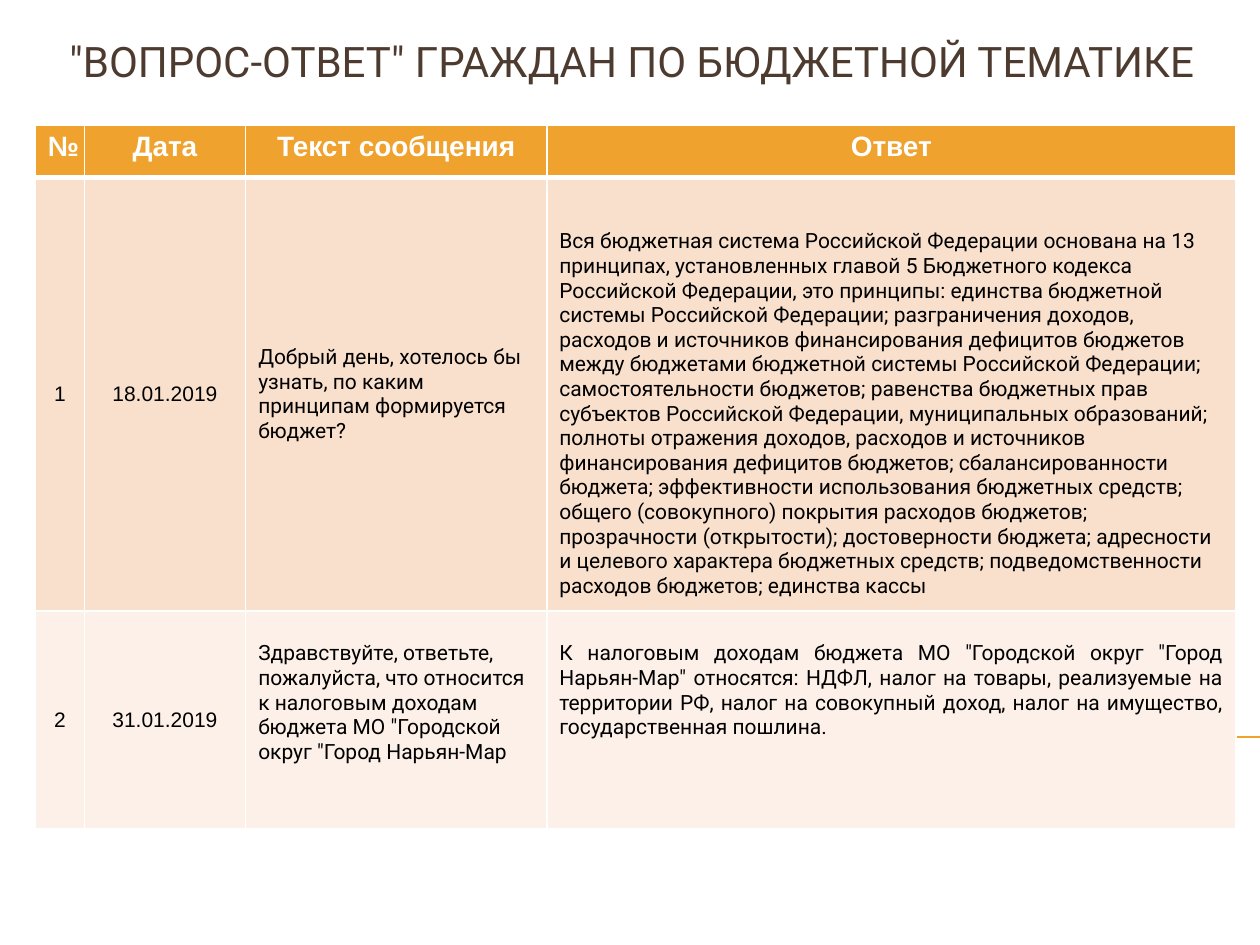
import lxml.etree
import pptx
import pptx.dml.color
import pptx.enum.shapes
import pptx.enum.text
import pptx.oxml.ns
import pptx.util
from pptx.util import Inches

ALIGN = pptx.enum.text.PP_ALIGN
ANCHOR = pptx.enum.text.MSO_ANCHOR

ORANGE = "F0A22E"
WHITE = "FFFFFF"
BLACK = "000000"
BROWN = "4E3B30"
ROW_FILLS = ["F9E0CD", "FCF0E8"]

COLUMN_WIDTHS = [0.39, 1.28, 2.39, 5.47]
ROW_HEIGHTS = [0.42, 3.44, 1.73]
HEADERS = ["№", "Дата", "Текст сообщения", "Ответ"]
PRINCIPLES_INTRO = (
    "Вся бюджетная система Российской Федерации основана на 13 принципах, "
    "установленных главой 5 Бюджетного кодекса Российской Федерации, это принципы: "
)
PRINCIPLES = [
    "единства бюджетной системы Российской Федерации",
    "разграничения доходов, расходов и источников финансирования дефицитов бюджетов "
    "между бюджетами бюджетной системы Российской Федерации",
    "самостоятельности бюджетов",
    "равенства бюджетных прав субъектов Российской Федерации, муниципальных образований",
    "полноты отражения доходов, расходов и источников финансирования дефицитов бюджетов",
    "сбалансированности бюджета",
    "эффективности использования бюджетных средств",
    "общего (совокупного) покрытия расходов бюджетов",
    "прозрачности (открытости)",
    "достоверности бюджета",
    "адресности и целевого характера бюджетных средств",
    "подведомственности расходов бюджетов",
    "единства кассы",
]
MESSAGES = [
    [
        "1",
        "18.01.2019",
        "Добрый день, хотелось бы узнать, по каким принципам формируется бюджет?",
        PRINCIPLES_INTRO + "; ".join(PRINCIPLES),
    ],
    [
        "2",
        "31.01.2019",
        "Здравствуйте, ответьте, пожалуйста, что относится к налоговым доходам "
        "бюджета МО \"Городской округ \"Город Нарьян-Мар",
        "К налоговым доходам бюджета МО \"Городской округ \"Город Нарьян-Мар\" "
        "относятся: НДФЛ, налог на товары, реализуемые на территории РФ, налог на "
        "совокупный доход, налог на имущество, государственная пошлина.",
    ],
]
CENTERED = (ALIGN.CENTER, ANCHOR.MIDDLE, 0.05)
CELL_LAYOUTS = [
    [CENTERED, CENTERED, (ALIGN.LEFT, ANCHOR.MIDDLE, 0.05), (ALIGN.LEFT, ANCHOR.TOP, 0.41)],
    [CENTERED, CENTERED, (ALIGN.LEFT, ANCHOR.TOP, 0.24), (ALIGN.JUSTIFY, ANCHOR.TOP, 0.24)],
]


def color(value):
    return pptx.dml.color.RGBColor.from_string(value)


def write_text(frame, text, font, size, text_color, alignment, bold=False):
    paragraph = frame.paragraphs[0]
    paragraph.alignment = alignment
    run = paragraph.add_run()
    run.text = text
    run.font.name = font
    run.font.size = pptx.util.Pt(size)
    run.font.bold = bold
    run.font.color.rgb = color(text_color)


def add_borders(cell, bottom_width):
    properties = cell._tc.get_or_add_tcPr()
    for side, width in (("lnL", 1), ("lnR", 1), ("lnT", 1), ("lnB", bottom_width)):
        line = lxml.etree.SubElement(
            properties, pptx.oxml.ns.qn("a:" + side), w=str(pptx.util.Pt(width))
        )
        fill = lxml.etree.SubElement(line, pptx.oxml.ns.qn("a:solidFill"))
        lxml.etree.SubElement(fill, pptx.oxml.ns.qn("a:srgbClr"), val=WHITE)


def format_cell(cell, fill_color, anchor, top_margin, bottom_width=1):
    add_borders(cell, bottom_width)
    cell.fill.solid()
    cell.fill.fore_color.rgb = color(fill_color)
    cell.vertical_anchor = anchor
    cell.margin_top = Inches(top_margin)


def add_rule(slide, left, top, width):
    rule = slide.shapes.add_connector(
        pptx.enum.shapes.MSO_CONNECTOR.STRAIGHT,
        Inches(left), Inches(top), Inches(left + width), Inches(top),
    )
    rule.line.color.rgb = color(ORANGE)
    rule.line.width = pptx.util.Pt(0.75)
    lxml.etree.SubElement(rule._element.spPr, pptx.oxml.ns.qn("a:effectLst"))


def add_title(slide, left, top, width, height):
    title = slide.shapes.title
    title.left, title.top = Inches(left), Inches(top)
    title.width, title.height = Inches(width), Inches(height)
    frame = title.text_frame
    frame.word_wrap = True
    frame.auto_size = pptx.enum.text.MSO_AUTO_SIZE.NONE
    frame.vertical_anchor = ANCHOR.TOP
    write_text(frame, "\"ВОПРОС-ОТВЕТ\" ГРАЖДАН ПО БЮДЖЕТНОЙ ТЕМАТИКЕ",
               "Roboto", 24, BROWN, ALIGN.CENTER)


def add_question_table(slide, left, top):
    table = slide.shapes.add_table(
        len(ROW_HEIGHTS), len(COLUMN_WIDTHS), Inches(left), Inches(top),
        Inches(sum(COLUMN_WIDTHS)), Inches(sum(ROW_HEIGHTS)),
    ).table
    for column, width in zip(table.columns, COLUMN_WIDTHS):
        column.width = Inches(width)
    for row, height in zip(table.rows, ROW_HEIGHTS):
        row.height = Inches(height)

    for column_index, header in enumerate(HEADERS):
        cell = table.cell(0, column_index)
        format_cell(cell, ORANGE, ANCHOR.TOP, 0.05, bottom_width=3)
        write_text(cell.text_frame, header, "Arial", 16, WHITE, ALIGN.CENTER, bold=True)

    for row_index, (message, layouts) in enumerate(zip(MESSAGES, CELL_LAYOUTS)):
        for column_index, (text, layout) in enumerate(zip(message, layouts)):
            alignment, anchor, top_margin = layout
            cell = table.cell(row_index + 1, column_index)
            format_cell(cell, ROW_FILLS[row_index], anchor, top_margin,
                        bottom_width=1)
            font = "Arial" if column_index < 2 else "Roboto"
            write_text(cell.text_frame, text, font, 12, BLACK, alignment)


def main():
    presentation = pptx.Presentation()
    presentation.slide_width = Inches(10)
    presentation.slide_height = Inches(7.5)
    slide = presentation.slides.add_slide(presentation.slide_layouts[5])
    add_rule(slide, 0.56, 5.85, 9.44)
    add_title(slide, 0.39, 0.23, 9.25, 0.78)
    add_question_table(slide, 0.28, 0.99)
    presentation.save("out.pptx")


if __name__ == "__main__":
    main()
